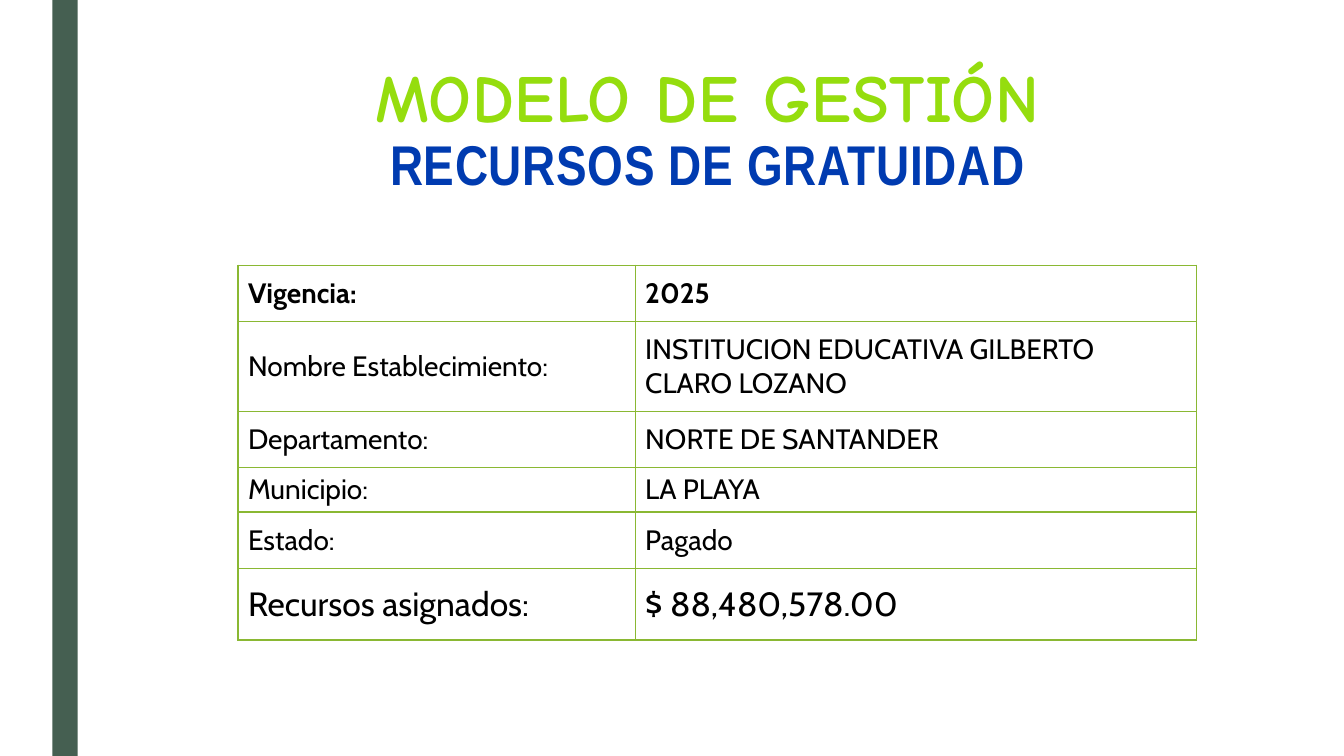
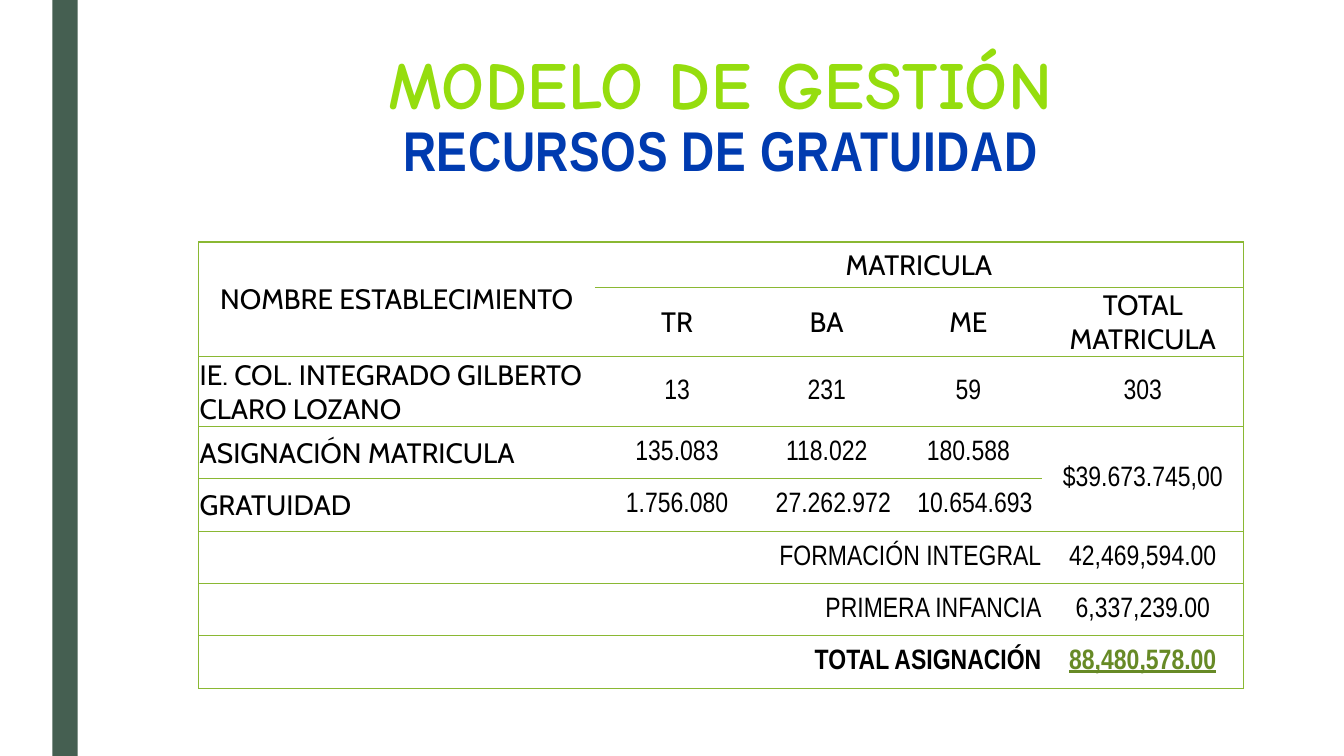
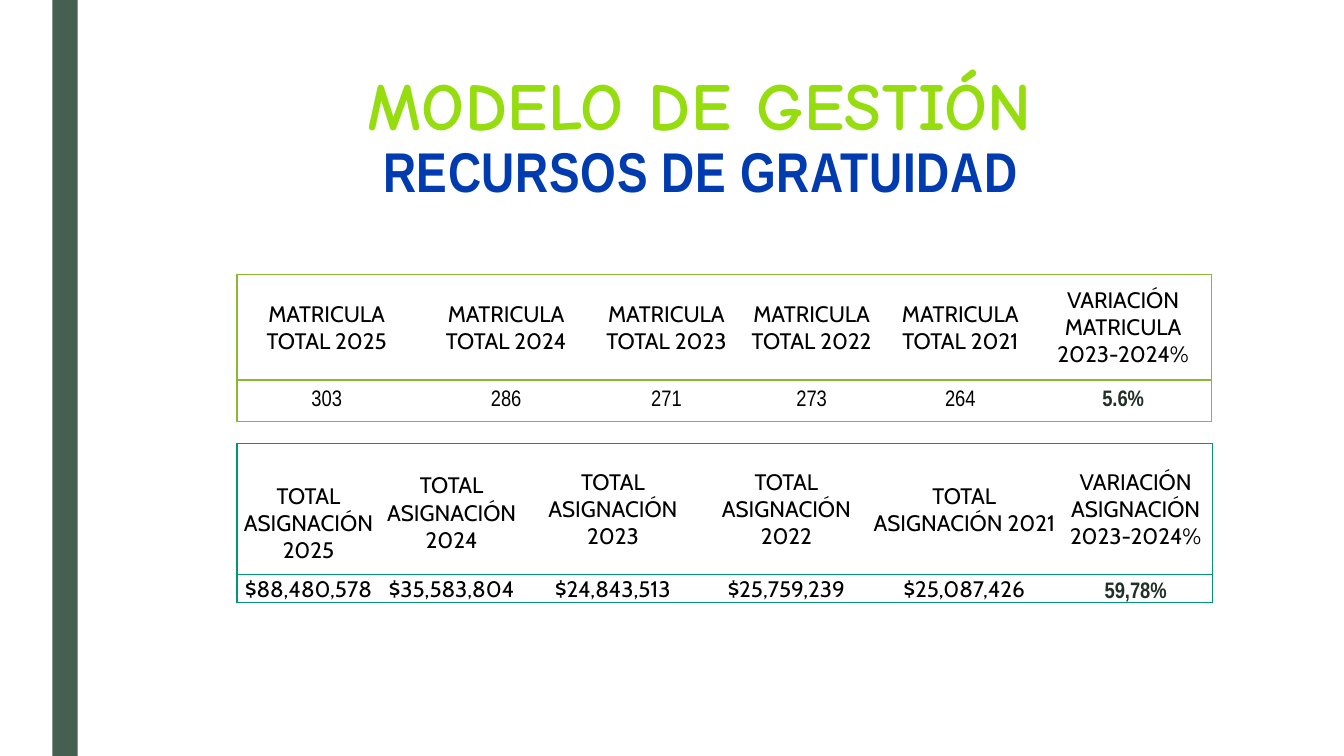
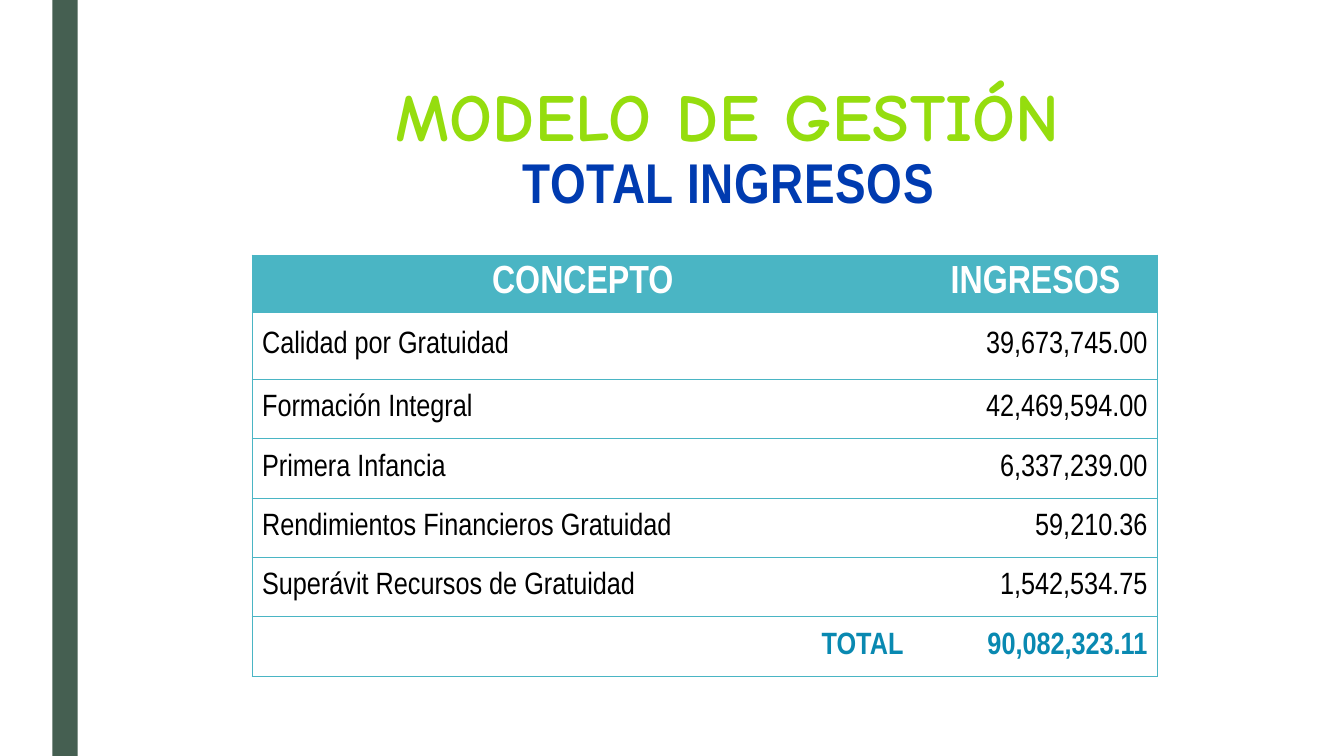
from itertools import product

from lxml import etree
from pptx import Presentation
from pptx.dml.color import RGBColor
from pptx.enum.shapes import MSO_SHAPE
from pptx.enum.text import MSO_ANCHOR, MSO_AUTO_SIZE, PP_ALIGN
from pptx.oxml.ns import qn
from pptx.util import Inches, Pt

LEFT, CENTER, RIGHT = PP_ALIGN.LEFT, PP_ALIGN.CENTER, PP_ALIGN.RIGHT
TOP, MIDDLE, BOTTOM = MSO_ANCHOR.TOP, MSO_ANCHOR.MIDDLE, MSO_ANCHOR.BOTTOM
RECTANGLE = MSO_SHAPE.RECTANGLE
NO_AUTOFIT = MSO_AUTO_SIZE.NONE

# ---- Theme: colours, fonts, sizes ----
CABIN, NARROW, COMIC = "Cabin", "Arial Narrow", "Comic Neue"
THEME = {
    "band": "455F51", "white": "FFFFFF", "black": "000000",
    "title_top": "95DD0E", "title_bottom": "6BA105", "subtitle": "003BB0",
    "green": "8AB833", "teal": "029676", "cyan": "4AB5C4",
    "title_size": 48, "subtitle_size": 40,
}
BASE = {"name": CABIN, "size": 20, "bold": False, "underline": False,
        "color": THEME["black"], "fill": THEME["white"],
        "align": LEFT, "anchor": MIDDLE}
FIGURE = {"name": NARROW, "align": CENTER}
CAPTION = {"size": 16, "align": CENTER}
CHANGE = {**FIGURE, "size": 16, "bold": True, "color": "223028"}
INCOME = {"name": NARROW, "size": 22}
INCOME_TOTAL = {**INCOME, "align": RIGHT, "bold": True, "color": "0989B1"}
STYLES = {
    "label": {},
    "label_bold": {"bold": True},
    "label_large": {"size": 24},
    "heading": {"align": CENTER},
    "figure": FIGURE,
    "figure_indented": {**FIGURE, "margin_left": 0.14},
    "sum_label": {"name": NARROW, "align": RIGHT},
    "grand_label": {"name": NARROW, "align": RIGHT, "bold": True},
    "grand_total": {**FIGURE, "bold": True, "underline": True, "color": "678A26"},
    "caption": CAPTION,
    "caption_low": {**CAPTION, "margin_top": 0.08},
    "caption_lowest": {**CAPTION, "margin_top": 0.28},
    "count": {**FIGURE, "size": 16},
    "change": CHANGE,
    "money": {**CAPTION, "anchor": BOTTOM},
    "change_low": {**CHANGE, "anchor": BOTTOM},
    "income_head": {**FIGURE, "size": 28, "bold": True,
                    "color": THEME["white"], "fill": THEME["cyan"]},
    "concept": INCOME,
    "income": {**INCOME, "align": RIGHT},
    "income_total": INCOME_TOTAL,
}
ROOMY = {"margin_left": 0.1, "margin_top": 0.05, "margin_right": 0.1, "margin_bottom": 0.05}
TIGHT = {"margin_left": 0.01, "margin_top": 0.01, "margin_right": 0.01, "margin_bottom": 0}

# ---- Content: each row is (height, style or styles by column, texts) ----
GREEN_LINE = (THEME["green"], 1)
TEAL_LINE = (THEME["teal"], 1)
CYAN_LINE = (THEME["cyan"], 0.5)
FREE_FUNDS = "RECURSOS DE GRATUIDAD"

establishment = {
    "at": (2.36, 2.63), "cols": (3.94, 5.57),
    "line": GREEN_LINE, "margins": ROOMY, "inner_lines": True,
    "rows": [
        (0.56, "label_bold", ("Vigencia:", "2025")),
        (0.89, "label", ("Nombre Establecimiento:",
                         "INSTITUCION EDUCATIVA GILBERTO CLARO LOZANO")),
        (0.56, "label", ("Departamento:", "NORTE DE SANTANDER")),
        (0.44, "label", ("Municipio:", "LA PLAYA")),
        (0.56, "label", ("Estado:", "Pagado")),
        (0.71, "label_large", ("Recursos asignados:", "$ 88,480,578.00")),
    ],
}

LABEL_FIGURES = ("label",) + ("figure",) * 4
SUM_ROW = ("sum_label",) * 4 + ("figure",)
allocation = {
    "at": (1.97, 2.4), "cols": (3.93, 1.63, 1.34, 1.47, 1.99),
    "line": GREEN_LINE, "margins": TIGHT,
    "rows": [
        (0.45, "heading", ("NOMBRE ESTABLECIMIENTO", "MATRICULA", "", "", "")),
        (0.69, "heading", ("", "TR", "BA", "ME", "TOTAL MATRICULA")),
        (0.69, LABEL_FIGURES, ("IE. COL. INTEGRADO GILBERTO CLARO LOZANO",
                               "13", "231", "59", "303")),
        (0.52, LABEL_FIGURES, ("ASIGNACIÓN MATRICULA", "135.083", "118.022",
                               "180.588", "$39.673.745,00")),
        (0.52, ("label", "figure", "figure_indented", "figure_indented", "figure"),
         ("GRATUIDAD", "1.756.080", "27.262.972", "10.654.693", "")),
        (0.52, SUM_ROW, ("FORMACIÓN INTEGRAL", "", "", "", "42,469,594.00")),
        (0.52, SUM_ROW, ("PRIMERA INFANCIA", "", "", "", "6,337,239.00")),
        (0.52, ("grand_label",) * 4 + ("grand_total",),
         ("TOTAL ASIGNACIÓN", "", "", "", "88,480,578.00")),
    ],
    # (row, column) of the first and last cell of each merged area
    "merges": [((0, 0), (1, 0)), ((0, 1), (0, 4)), ((3, 4), (4, 4))]
              + [((row, 0), (row, 3)) for row in (5, 6, 7)],
}

YEARS = (2025, 2024, 2023, 2022, 2021)
enrolment_history = {
    "at": (2.35, 2.72), "cols": (1.78, 1.78, 1.4, 1.48, 1.47, 1.76),
    "line": GREEN_LINE, "margins": TIGHT,
    "rows": [
        (1.05, "caption", [f"MATRICULA TOTAL {year}" for year in YEARS]
         + ["VARIACIÓN MATRICULA 2023-2024%"]),
        (0.41, ("count",) * 5 + ("change",),
         ("303", "286", "271", "273", "264", "5.6%")),
    ],
}
allocation_history = {
    "at": (2.35, 4.4), "cols": (1.42, 1.42, 1.78, 1.66, 1.87, 1.53),
    "line": TEAL_LINE, "margins": TIGHT,
    "rows": [
        (1.3, ("caption_lowest", "caption_low") + ("caption",) * 4,
         [f"TOTAL ASIGNACIÓN {year}" for year in YEARS]
         + ["VARIACIÓN ASIGNACIÓN 2023-2024%"]),
        (0.28, ("money",) * 5 + ("change_low",),
         ("$88,480,578", "$35,583,804", "$24,843,513", "$25,759,239",
          "$25,087,426", "59,78%")),
    ],
}

INCOME_ROW = ("concept", "income")
total_income = {
    "at": (2.5, 2.53), "cols": (6.56, 2.42),
    "line": CYAN_LINE, "margins": ROOMY,
    "rows": [
        (0.57, "income_head", ("CONCEPTO", "INGRESOS")),
        (0.66, INCOME_ROW, ("Calidad por Gratuidad", "39,673,745.00")),
        (0.59, INCOME_ROW, ("Formación Integral", "42,469,594.00")),
        (0.59, INCOME_ROW, ("Primera Infancia", "6,337,239.00")),
        (0.59, INCOME_ROW, ("Rendimientos Financieros Gratuidad", "59,210.36")),
        (0.59, INCOME_ROW, ("Superávit Recursos de Gratuidad", "1,542,534.75")),
        (0.59, "income_total", ("TOTAL", "90,082,323.11")),
    ],
}

# (title position and size, subtitle, tables)
SLIDES = [
    ((0.99, 0.6, 12.06, 1.11), FREE_FUNDS, [establishment]),
    ((1.65, 0.47, 11, 1.59), FREE_FUNDS, [allocation]),
    ((0.92, 0.67, 12.06, 1.11), FREE_FUNDS, [allocation_history, enrolment_history]),
    ((1.49, 0.78, 11.47, 1.11), "TOTAL INGRESOS", [total_income]),
]


def rgb(value):
    return RGBColor.from_string(value)


def set_all(target, values):
    for key, value in values.items():
        setattr(target, key, value)


def add_band_to_master(prs, slide):
    """Draw the side band once and hand it to the master."""
    band = slide.shapes.add_shape(RECTANGLE, Inches(0.52), 0, Inches(0.25), prs.slide_height)
    band.shadow.inherit = False
    band.fill.solid()
    band.fill.fore_color.rgb = rgb(THEME["band"])
    band.line.fill.background()
    band.element.nvSpPr.cNvPr.set("id", "100")
    prs.slide_master.shapes.element.insert(2, band.element)


def write_title(title, box, subtitle):
    set_all(title, dict(zip(("left", "top", "width", "height"), map(Inches, box))))
    set_all(title.text_frame, {"auto_size": NO_AUTOFIT, "vertical_anchor": TOP,
                               "word_wrap": True})
    paragraph = title.text_frame.paragraphs[0]
    set_all(paragraph, {"alignment": CENTER, "line_spacing": 0.89})

    heading = paragraph.add_run()
    heading.text = "MODELO DE GESTIÓN"
    paragraph.add_line_break()
    subheading = paragraph.add_run()
    subheading.text = subtitle
    for run, font, size in ((heading, COMIC, THEME["title_size"]),
                            (subheading, NARROW, THEME["subtitle_size"])):
        set_all(run.font, {"name": font, "size": Pt(size), "bold": True})
        run.font.element.set("spc", "50") if hasattr(run.font, "element") else \
            run._r.get_or_add_rPr().set("spc", "50")

    gradient = heading.font.fill
    gradient.gradient()
    gradient.gradient_angle = 270
    stops = ((0.25, THEME["title_top"]), (1, THEME["title_bottom"]))
    for stop, (position, color) in zip(gradient.gradient_stops, stops):
        stop.position = position
        stop.color.rgb = rgb(color)
    subheading.font.color.rgb = rgb(THEME["subtitle"])


def write_cell(cell, text, style, margins):
    look = {**BASE, **margins, **STYLES[style]}
    set_all(cell, {key: Inches(look[key]) for key in margins})
    cell.vertical_anchor = look["anchor"]
    cell.fill.solid()
    cell.fill.fore_color.rgb = rgb(look["fill"])
    paragraph = cell.text_frame.paragraphs[0]
    paragraph.alignment = look["align"]
    if text:
        run = paragraph.add_run()
        run.text = text
        set_all(run.font, {key: look[key] for key in ("name", "bold", "underline")})
        run.font.size = Pt(look["size"])
        run.font.color.rgb = rgb(look["color"])


def set_borders(cell, visible_sides, color, width):
    props = cell._tc.get_or_add_tcPr()
    for index, side in enumerate("LRTB"):
        line = etree.Element(qn(f"a:ln{side}"), w=str(Pt(width)))
        if side in visible_sides:
            fill = etree.SubElement(line, qn("a:solidFill"))
            etree.SubElement(fill, qn("a:srgbClr"), val=color)
        else:
            etree.SubElement(line, qn("a:noFill"))
        props.insert(index, line)


def draw_borders(table, grid, line, inner_lines):
    """Rule every row and the outline; inner verticals only on request."""
    owner = {place: place for place in grid}
    for row, col in grid:
        cell = table.cell(row, col)
        if cell.is_merge_origin:
            for down, across in product(range(cell.span_height), range(cell.span_width)):
                owner[row + down, col + across] = (row, col)
    for row, col in grid:
        cell = table.cell(row, col)
        neighbours = {"L": (row, col - 1), "R": (row, col + cell.span_width),
                      "T": (row - 1, col), "B": (row + cell.span_height, col)}
        visible = [side for side, place in neighbours.items()
                   if place not in owner
                   or (owner[place] != owner[row, col] and (side in "TB" or inner_lines))]
        set_borders(cell, visible, *line)


def add_ruled_table(slide, data):
    rows, cols = data["rows"], data["cols"]
    heights = [height for height, _, _ in rows]
    table = slide.shapes.add_table(
        len(rows), len(cols), *map(Inches, (*data["at"], sum(cols), sum(heights)))).table
    set_all(table, {"first_row": False, "horz_banding": False})
    for column, width in zip(table.columns, cols):
        column.width = Inches(width)
    for table_row, (height, styles, texts) in zip(table.rows, rows):
        table_row.height = Inches(height)
        if isinstance(styles, str):
            styles = [styles] * len(cols)
        for cell, text, style in zip(table_row.cells, texts, styles):
            write_cell(cell, text, style, data["margins"])
    for first, last in data.get("merges", []):
        table.cell(*first).merge(table.cell(*last))
    grid = list(product(range(len(rows)), range(len(cols))))
    draw_borders(table, grid, data["line"], data.get("inner_lines", False))


def main():
    prs = Presentation()
    set_all(prs, {"slide_width": Inches(13.33), "slide_height": Inches(7.5)})
    title_only = prs.slide_layouts[5]
    for number, (title_box, subtitle, tables) in enumerate(SLIDES):
        slide = prs.slides.add_slide(title_only)
        if number == 0:
            add_band_to_master(prs, slide)
        write_title(slide.shapes.title, title_box, subtitle)
        for data in tables:
            add_ruled_table(slide, data)
    prs.save("out.pptx")


if __name__ == "__main__":
    main()
